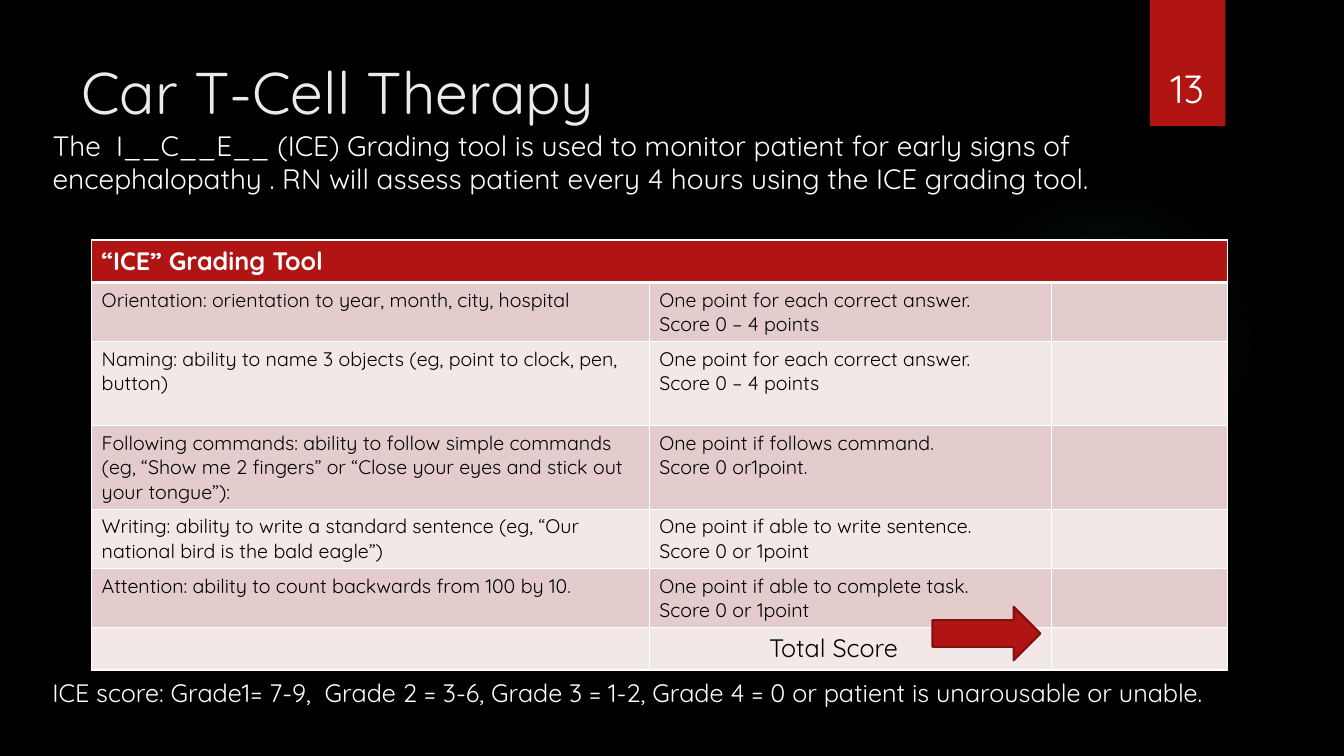
from lxml import etree
from pptx import Presentation
from pptx import util as u
from pptx.dml.color import RGBColor
from pptx.enum import shapes, text
from pptx.oxml import parse_xml
from pptx.oxml.ns import qn

HUES = {"back": "000000", "red": "B01513", "edge": "82100E", "glow": "50B9C1",
        "title": "EBEBEB", "white": "FFFFFF", "black": "000000",
        "dark": "E4CCCC", "light": "F2E8E7"}
NS = 'xmlns:a="http://schemas.openxmlformats.org/drawingml/2006/main"'
COLS = [14.05, 10.13, 4.45]
ROWS = [
    (1.49, "Orientation: orientation to year, month, city, hospital",
     ["One point for each correct answer.", "Score 0 – 4 points"]),
    (2.11, "Naming: ability to name 3 objects (eg, point to clock, pen, button)",
     ["One point for each correct answer.", "Score 0 – 4 points"]),
    (2.11, "Following commands: ability to follow simple commands (eg, “Show me 2 "
     "fingers” or “Close your eyes and stick out your tongue”):",
     ["One point if follows command.", "Score 0 or1point."]),
    (1.49, "Writing: ability to write a standard sentence (eg, “Our national bird "
     "is the bald eagle”)",
     ["One point if able to write sentence.", "Score 0 or 1point"]),
    (1.49, "Attention: ability to count backwards from 100 by 10.",
     ["One point if able to complete task.", "Score 0 or 1point"]),
]


class Deck:
    """Holds the style and the current slide."""

    def __init__(self):
        self.prs = Presentation()
        self.prs.slide_width, self.prs.slide_height = u.Cm(33.87), u.Cm(19.05)
        self.slide = self.prs.slides.add_slide(self.prs.slide_layouts[1])
        self.font = "Quicksand"
        self.paint(self.slide.background.fill, "back")

    def paint(self, fill, hue):
        fill.solid()
        fill.fore_color.rgb = RGBColor.from_string(HUES[hue])

    def put(self, frame, lines, size, hue, bold=False, align=text.PP_ALIGN.LEFT):
        for i, line in enumerate(lines):
            para = frame.paragraphs[0] if i == 0 else frame.add_paragraph()
            para.alignment = align
            run = para.add_run()
            run.text = line
            font = run.font
            font.name, font.size, font.bold = self.font, u.Pt(size), bold
            font.color.rgb = RGBColor.from_string(HUES[hue])

    def hold(self, item, box, line, size, hue):
        item.left, item.top, item.width, item.height = map(u.Cm, box)
        frame = item.text_frame
        frame.vertical_anchor = text.MSO_ANCHOR.TOP
        frame.auto_size = text.MSO_AUTO_SIZE.NONE
        self.put(frame, [line], size, hue)
        return frame

    def title(self, box, line):
        self.hold(self.slide.shapes.title, box, line, 42, "title")

    def body(self, box, line):
        frame = self.hold(self.slide.placeholders[1], box, line, 20, "white")
        para = frame.paragraphs[0]
        para.space_before = u.Pt(0)
        props = para._p.get_or_add_pPr()
        props.set("marL", "0")
        props.set("indent", "0")
        etree.SubElement(props, qn("a:buNone"))

    def label(self, box, line, size, align=text.PP_ALIGN.LEFT,
              anchor=text.MSO_ANCHOR.TOP):
        frame = self.slide.shapes.add_textbox(*map(u.Cm, box)).text_frame
        frame.word_wrap = True
        frame.vertical_anchor = anchor
        self.put(frame, [line], size, "white", align=align)

    def shape(self, kind, box, hue, edge=None):
        item = self.slide.shapes.add_shape(kind, *map(u.Cm, box))
        item.shadow.inherit = False
        self.paint(item.fill, hue)
        if edge:
            self.paint(item.line.fill, edge)
            item.line.width = u.Pt(1.5)
        else:
            item.line.fill.background()
        return item

    def glow(self, box):
        item = self.shape(shapes.MSO_SHAPE.OVAL, box, "glow")
        stops = "".join(
            f'<a:gs pos="{pos}000"><a:srgbClr val="{HUES["glow"]}">'
            f'<a:alpha val="{alpha}000"/></a:srgbClr></a:gs>'
            for pos, alpha in [(0, 7), (36, 6), (69, 0), (100, 0)])
        props = item._element.spPr
        solid = props.find(qn("a:solidFill"))
        props.replace(solid, parse_xml(
            f'<a:gradFill {NS}><a:gsLst>{stops}</a:gsLst><a:path path="circle">'
            '<a:fillToRect l="50000" t="50000" r="50000" b="50000"/>'
            '</a:path></a:gradFill>'))
        self.slide.shapes._spTree.insert(2, item._element)

    def cell(self, cell, lines, size, hue, fill, bold=False, base=1):
        props = cell._tc.get_or_add_tcPr()
        for side in "LRTB":
            width = u.Pt(base if side == "B" else 1)
            props.append(parse_xml(
                f'<a:ln{side} {NS} w="{width}"><a:solidFill>'
                f'<a:srgbClr val="{HUES["white"]}"/></a:solidFill></a:ln{side}>'))
        self.paint(cell.fill, fill)
        self.put(cell.text_frame, lines, size, hue, bold)

    def table(self, left, top):
        highs = [1.07] + [row[0] for row in ROWS] + [1.07]
        grid = self.slide.shapes.add_table(
            len(highs), len(COLS), u.Cm(left), u.Cm(top),
            u.Cm(sum(COLS)), u.Cm(sum(highs))).table
        grid.first_row = grid.horz_banding = False
        for col, wide in zip(grid.columns, COLS):
            col.width = u.Cm(wide)
        for row, high in zip(grid.rows, highs):
            row.height = u.Cm(high)
        grid.cell(0, 0).merge(grid.cell(0, 2))
        for c, lines in enumerate([["“ICE” Grading Tool"], [], []]):
            self.cell(grid.cell(0, c), lines, 18, "white", "red", True, 3)
        body = [([task], score, []) for _, task, score in ROWS]
        body.append(([], ["Total Score"], []))
        for r, row in enumerate(body, 1):
            size = 18 if r == len(body) else 14
            for c, lines in enumerate(row):
                self.cell(grid.cell(r, c), lines, size, "black",
                          "dark" if r % 2 else "light")
        grid.cell(len(body), 1).margin_left = u.Cm(3.02)


def main():
    deck = Deck()
    deck.glow((23.9, 4.65, 7.82, 7.82))
    deck.shape(shapes.MSO_SHAPE.RECTANGLE, (28.98, 0, 1.9, 3.18), "red")
    deck.title((1.8, 1.27, 26.14, 3.89), "Car T-Cell Therapy")
    deck.body((1.07, 3.1, 26.85, 14.25),
              "The  I__C__E__ (ICE) Grading tool is used to monitor patient for "
              "early signs of encephalopathy . RN will assess patient every 4 hours "
              "using the ICE grading tool.")
    deck.table(2.31, 6.05)
    deck.shape(shapes.MSO_SHAPE.RIGHT_ARROW, (23.5, 15.29, 2.72, 1.35), "red", "edge")
    deck.label((1.07, 16.94, 32.44, 1.02),
               "ICE score: Grade1= 7-9,  Grade 2 = 3-6, Grade 3 = 1-2, "
               "Grade 4 = 0 or patient is unarousable or unable.", 18)
    deck.label((28.75, 0.81, 2.34, 2.13), "13", 28,
               text.PP_ALIGN.CENTER, text.MSO_ANCHOR.BOTTOM)
    deck.prs.save("out.pptx")


if __name__ == "__main__":
    main()
